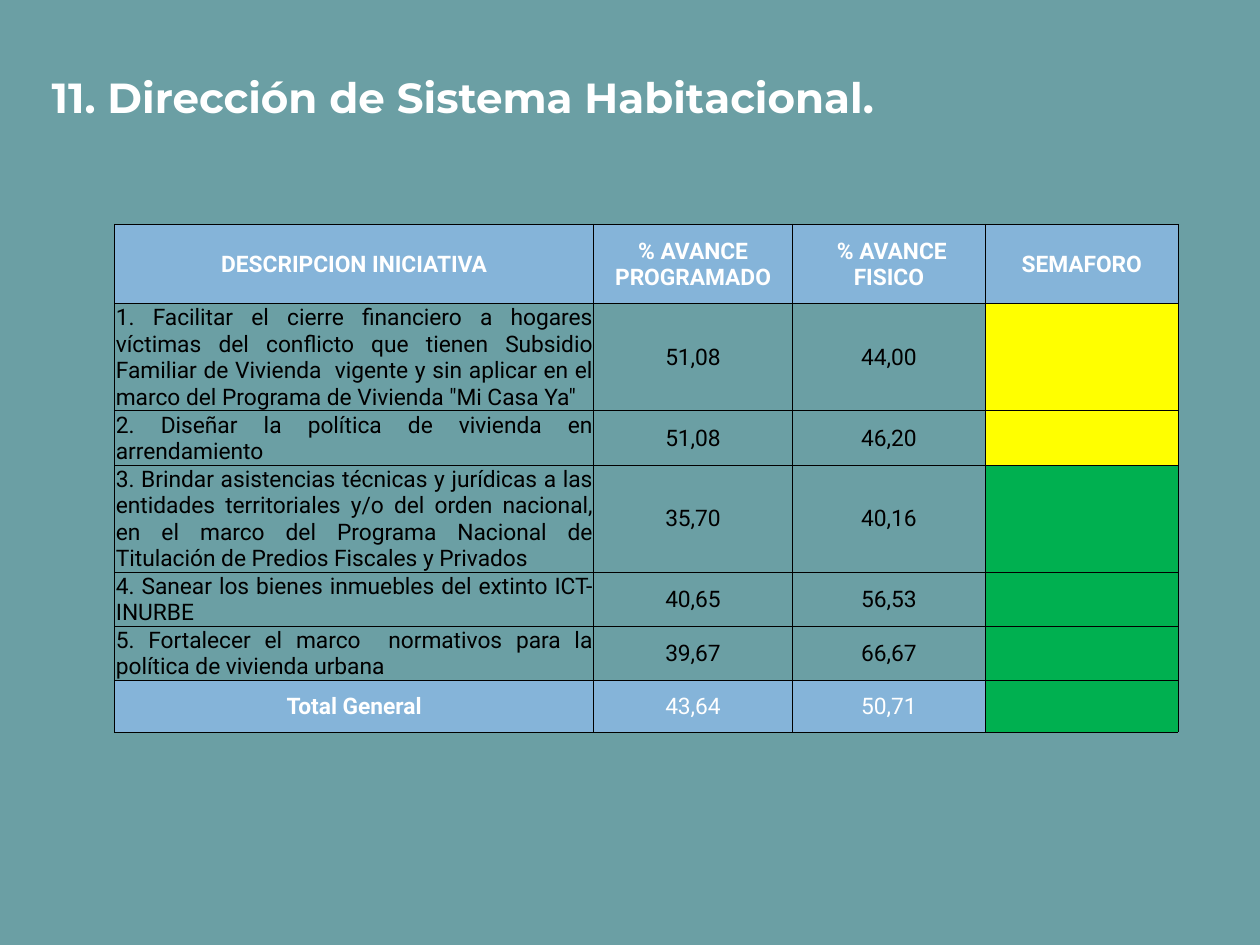
from lxml import etree
from pptx import Presentation
from pptx.dml.color import RGBColor
from pptx.enum import text
from pptx.oxml import ns
from pptx.util import Inches, Pt

TEAL = RGBColor(0x6B, 0x9F, 0xA4)
BLUE = RGBColor(0x85, 0xB4, 0xD9)
YELLOW = RGBColor(0xFF, 0xFF, 0x00)
GREEN = RGBColor(0x00, 0xB0, 0x50)
WHITE = RGBColor(0xFF, 0xFF, 0xFF)
BLACK = RGBColor(0x00, 0x00, 0x00)

TITLE = "11. Dirección de Sistema Habitacional."
HEADER = ["DESCRIPCION INICIATIVA", "% AVANCE PROGRAMADO", " % AVANCE FISICO", "SEMAFORO"]
INITIATIVES = [
    ("1. Facilitar el cierre financiero a hogares víctimas del conflicto que tienen "
     "Subsidio Familiar de Vivienda  vigente y sin aplicar en el marco del Programa "
     'de Vivienda "Mi Casa Ya"', "51,08", "44,00", YELLOW),
    ("2. Diseñar la política de vivienda en arrendamiento", "51,08", "46,20", YELLOW),
    ("3. Brindar asistencias técnicas y jurídicas a las entidades territoriales y/o "
     "del orden nacional, en el marco del Programa Nacional de Titulación de Predios "
     "Fiscales y Privados", "35,70", "40,16", GREEN),
    ("4. Sanear los bienes inmuebles del extinto ICT-INURBE", "40,65", "56,53", GREEN),
    ("5. Fortalecer el marco  normativos para la política de vivienda urbana",
     "39,67", "66,67", GREEN),
]
TOTAL = ("Total General", "43,64", "50,71", GREEN)
COLS = [3.8, 1.58, 1.53, 1.53]
ROWS = [0.63, 0.85, 0.43, 0.85, 0.43, 0.43, 0.41]
MARGINS = {"margin_left": Inches(0.01), "margin_right": Inches(0.01),
           "margin_top": Inches(0.01), "margin_bottom": 0,
           "vertical_anchor": text.MSO_ANCHOR.MIDDLE}


def set_all(obj, values):
    for name, value in values.items():
        setattr(obj, name, value)


def set_font(font, color, **values):
    set_all(font, values)
    font.color.rgb = color


def add_borders(cell):
    tc_pr = cell._tc.get_or_add_tcPr()
    for i, side in enumerate(("lnL", "lnR", "lnT", "lnB")):
        ln = etree.Element(ns.qn(f"a:{side}"), w=str(Pt(0.5)))
        fill = etree.SubElement(ln, ns.qn("a:solidFill"))
        etree.SubElement(fill, ns.qn("a:srgbClr"), val=str(BLACK))
        tc_pr.insert(i, ln)


def fill_cell(cell, value, fill, color, bold, align):
    set_all(cell, MARGINS)
    if fill is None:
        cell.fill.background()
    else:
        cell.fill.solid()
        cell.fill.fore_color.rgb = fill
    add_borders(cell)
    p = cell.text_frame.paragraphs[0]
    p.text = value
    p.alignment = align
    set_font(p.font, color, name="Roboto", size=Pt(13), bold=bold)


prs = Presentation()
prs.slide_width, prs.slide_height = Inches(10), Inches(7.5)
s = prs.slides.add_slide(prs.slide_layouts[5])
s.background.fill.solid()
s.background.fill.fore_color.rgb = TEAL

title = s.shapes.title
set_all(title, {"left": Inches(0.31), "top": Inches(0.3),
                "width": Inches(9.19), "height": Inches(0.77)})
tf = title.text_frame
tf.text = TITLE
set_all(tf, dict.fromkeys(("margin_left", "margin_top", "margin_right", "margin_bottom"),
                          Inches(0.1)))
set_all(tf, {"word_wrap": True, "auto_size": text.MSO_AUTO_SIZE.NONE,
             "vertical_anchor": text.MSO_ANCHOR.BOTTOM})
p = tf.paragraphs[0]
p.alignment = text.PP_ALIGN.LEFT
set_font(p.font, WHITE, name="Montserrat", size=Pt(24), bold=True)

table = s.shapes.add_table(len(ROWS), len(COLS), Inches(0.91), Inches(1.78),
                           Inches(sum(COLS)), Inches(sum(ROWS))).table
set_all(table, {"first_row": False, "horz_banding": False})
for col, width in zip(table.columns, COLS):
    col.width = Inches(width)
for row, height in zip(table.rows, ROWS):
    row.height = Inches(height)

records = [HEADER, *INITIATIVES, TOTAL]
for i, record in enumerate(records):
    is_header, is_total = i == 0, i == len(records) - 1
    banner = is_header or is_total
    for j, value in enumerate(record):
        is_light = isinstance(value, RGBColor)
        justified = j == 0 and not banner
        fill_cell(table.cell(i, j),
                  "" if is_light else value,
                  value if is_light else BLUE if banner else None,
                  WHITE if banner else BLACK,
                  is_header or (is_total and j == 0),
                  text.PP_ALIGN.JUSTIFY if justified else text.PP_ALIGN.CENTER)

prs.save("out.pptx")
